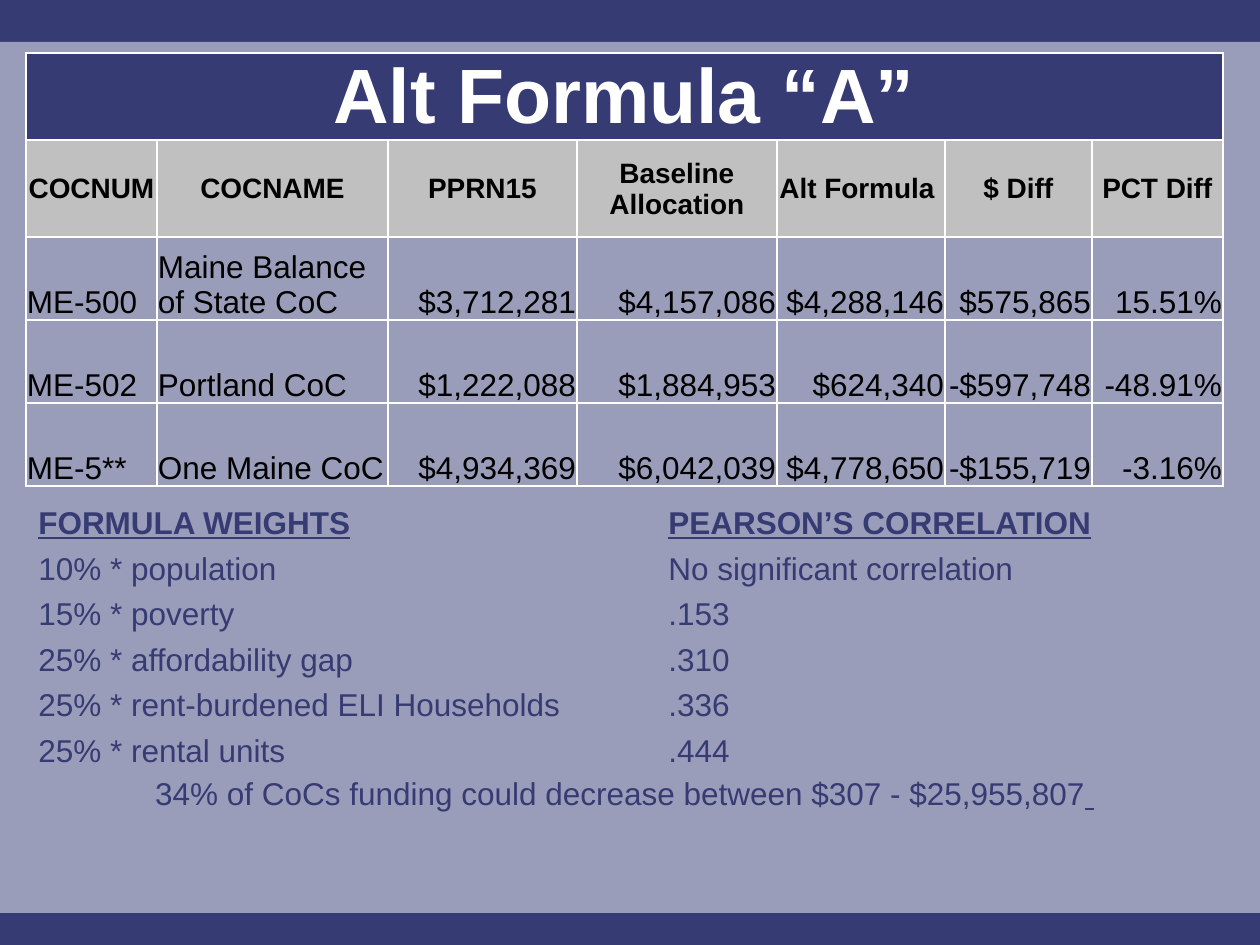
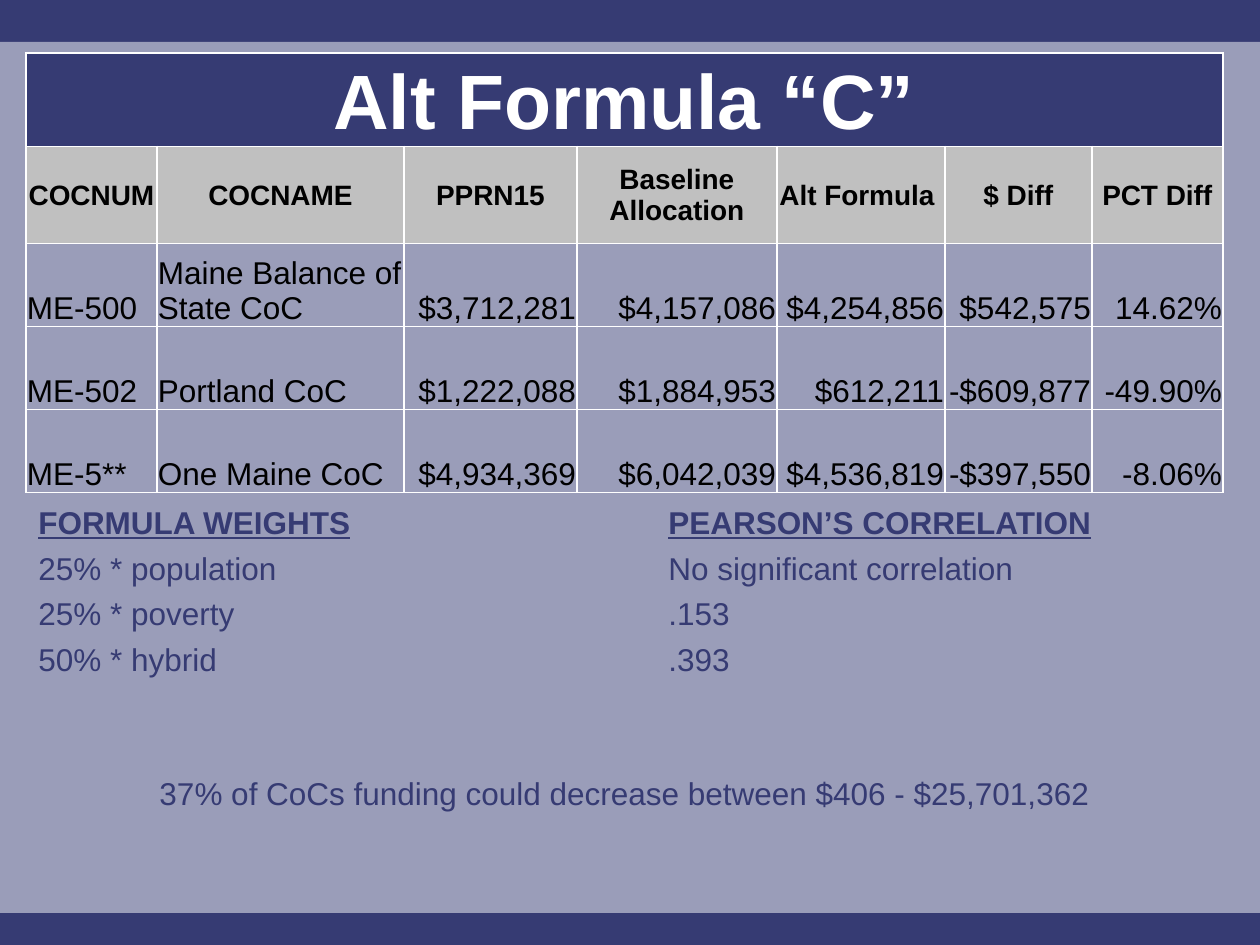
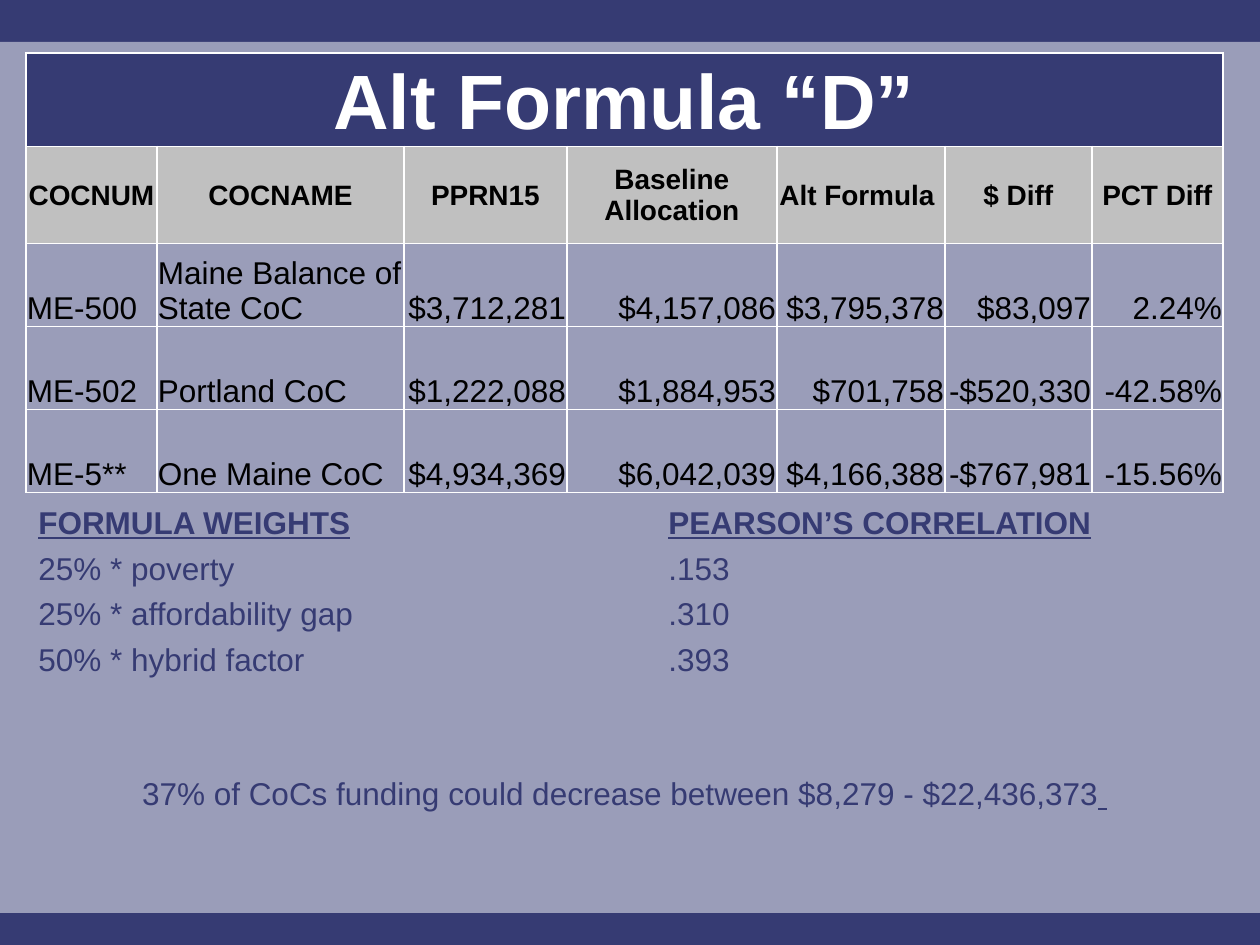
"""Build three slides that compare alternative funding formulas."""
from dataclasses import dataclass

from lxml.etree import SubElement
from pptx import Presentation
from pptx.dml.color import RGBColor
from pptx.enum.shapes import MSO_SHAPE
from pptx.enum.text import MSO_ANCHOR, PP_ALIGN
from pptx.oxml.ns import qn
from pptx.util import Pt

HEADERS = ["COCNUM", "COCNAME", "PPRN15", "Baseline Allocation", "Alt Formula ", "$ Diff", "PCT Diff"]
AREAS = [
    ("ME-500", "Maine Balance of State CoC", "$3,712,281", "$4,157,086"),
    ("ME-502", "Portland CoC", "$1,222,088", "$1,884,953"),
    ("ME-5**", "One Maine CoC", "$4,934,369", "$6,042,039"),
]
WEIGHT_HEADINGS = ("FORMULA WEIGHTS", "PEARSON’S CORRELATION")
FORMULAS = [
    {
        "title": "Alt Formula “A”",
        "middle_columns": [231, 189, 200],
        "results": [
            ("$4,288,146", "$575,865", "15.51%"),
            ("$624,340", "-$597,748", "-48.91%"),
            ("$4,778,650", "-$155,719", "-3.16%"),
        ],
        "weights": [
            ("10% * population", "No significant correlation"),
            ("15% * poverty", ".153"),
            ("25% * affordability gap", ".310"),
            ("25% * rent-burdened ELI Households", ".336"),
            ("25% * rental units", ".444"),
        ],
        "impact": "34% of CoCs funding could decrease between $307 - $25,955,807",
        "underlined_end": " ",
    },
    {
        "title": "Alt Formula “C”",
        "middle_columns": [247, 173, 200],
        "results": [
            ("$4,254,856", "$542,575", "14.62%"),
            ("$612,211", "-$609,877", "-49.90%"),
            ("$4,536,819", "-$397,550", "-8.06%"),
        ],
        "weights": [
            ("25% * population", "No significant correlation"),
            ("25% * poverty", ".153"),
            ("50% * hybrid", ".393"),
        ],
        "impact": "37% of CoCs funding could decrease between $406 - $25,701,362",
        "underlined_end": "",
    },
    {
        "title": "Alt Formula “D”",
        "middle_columns": [247, 163, 210],
        "results": [
            ("$3,795,378", "$83,097", "2.24%"),
            ("$701,758", "-$520,330", "-42.58%"),
            ("$4,166,388", "-$767,981", "-15.56%"),
        ],
        "weights": [
            ("25% * poverty", ".153"),
            ("25% * affordability gap", ".310"),
            ("50% * hybrid factor", ".393"),
        ],
        "impact": "37% of CoCs funding could decrease between $8,279 - $22,436,373",
        "underlined_end": " ",
    },
]

PX_PER_INCH = 126
SLIDE_SIZE = (1260, 945)
PANEL_BOX = (0, 42, 1260, 871)
CONTENT_LEFT, CONTENT_WIDTH = 26, 1197
TABLE_TOP = 53
ROW_HEIGHTS = [83, 97, 83, 83, 83]
FIRST_COLUMN = 131
LAST_COLUMNS = [168, 147, 131]
WEIGHTS_BOX = (CONTENT_LEFT, 497, CONTENT_WIDTH, 230)
IMPACT_BOX = (CONTENT_LEFT, 768, CONTENT_WIDTH, 114)
CORRELATION_TAB = 630


@dataclass(frozen=True)
class Theme:
    """Colours, font and type sizes."""
    navy: str = "363B73"
    white: str = "FFFFFF"
    black: str = "000000"
    grey: str = "C0C0C0"
    font: str = "Arial"
    title_size: int = 44
    header_size: int = 16
    body_size: int = 18
    paragraph_gap: float = 4.4
    border_width: int = 1


THEME = Theme()


def px(length):
    """Turn pixels into EMU."""
    return round(length * 914400 / PX_PER_INCH)


def colour(code):
    """Turn a hex code into a colour."""
    return RGBColor.from_string(code)


def add_run(paragraph, text, size, code, bold=False, underline=False):
    """Add one formatted run."""
    run = paragraph.add_run()
    run.text = text
    font = run.font
    font.name, font.size, font.bold, font.underline = THEME.font, Pt(size), bold, underline
    font.color.rgb = colour(code)


def add_panel(slide, master):
    """Lay the half-transparent panel on the master."""
    panel = slide.shapes.add_shape(MSO_SHAPE.RECTANGLE, *map(px, PANEL_BOX))
    panel.shadow.inherit = False
    panel.line.fill.background()
    panel.fill.solid()
    panel.fill.fore_color.rgb = colour(THEME.white)
    SubElement(next(panel.element.iter(qn("a:srgbClr"))), qn("a:alpha"), val="50000")
    next(panel.element.iter(qn("p:cNvPr"))).set("id", "20")
    master.shapes.element.insert(2, panel.element)


def style_cell(cell, fill, anchor):
    """Set the borders, fill, margins and anchor of a cell."""
    properties = cell._tc.get_or_add_tcPr()
    for side in ("lnL", "lnR", "lnT", "lnB"):
        border = SubElement(properties, qn(f"a:{side}"), w=str(Pt(THEME.border_width)))
        SubElement(SubElement(border, qn("a:solidFill")), qn("a:srgbClr"), val=THEME.white)
    if fill:
        cell.fill.solid()
        cell.fill.fore_color.rgb = colour(fill)
    else:
        cell.fill.background()
    cell.margin_left = cell.margin_right = cell.margin_top = px(1)
    cell.margin_bottom = 0
    cell.vertical_anchor = anchor


def write_cell(cell, text, size, code, alignment, bold=False):
    """Write one run into a cell."""
    paragraph = cell.text_frame.paragraphs[0]
    paragraph.alignment = alignment
    add_run(paragraph, text, size, code, bold)


def add_formula_table(slide, formula):
    """Add the table with its title row, headers and values."""
    columns = [FIRST_COLUMN, *formula["middle_columns"], *LAST_COLUMNS]
    box = (CONTENT_LEFT, TABLE_TOP, CONTENT_WIDTH, sum(ROW_HEIGHTS))
    table = slide.shapes.add_table(len(ROW_HEIGHTS), len(columns), *map(px, box)).table
    table.first_row = table.horz_banding = False
    for column, width in zip(table.columns, columns):
        column.width = px(width)
    row_fills = [THEME.navy, THEME.grey, None, None, None]
    for index, (row, height) in enumerate(zip(table.rows, ROW_HEIGHTS)):
        row.height = px(height)
        for cell in row.cells:
            style_cell(cell, row_fills[index], MSO_ANCHOR.MIDDLE if index == 1 else MSO_ANCHOR.BOTTOM)

    title = table.cell(0, 0)
    title.merge(table.cell(0, len(columns) - 1))
    write_cell(title, formula["title"], THEME.title_size, THEME.white, PP_ALIGN.CENTER, True)
    for column, header in enumerate(HEADERS):
        write_cell(table.cell(1, column), header, THEME.header_size, THEME.black, PP_ALIGN.CENTER, True)
    for row, (area, results) in enumerate(zip(AREAS, formula["results"]), 2):
        for column, value in enumerate(area + results):
            alignment = PP_ALIGN.LEFT if column < 2 else PP_ALIGN.RIGHT
            write_cell(table.cell(row, column), value, THEME.body_size, THEME.black, alignment)


def add_text_frame(slide, box):
    """Add a wrapping text box and return its frame."""
    frame = slide.shapes.add_textbox(*map(px, box)).text_frame
    frame.word_wrap = True
    return frame


def add_weights(slide, weights):
    """List each weight with its correlation at a tab stop."""
    frame = add_text_frame(slide, WEIGHTS_BOX)
    for index, (weight, correlation) in enumerate([WEIGHT_HEADINGS, *weights]):
        heading = index == 0
        paragraph = frame.paragraphs[0] if heading else frame.add_paragraph()
        tabs = SubElement(paragraph._p.get_or_add_pPr(), qn("a:tabLst"))
        SubElement(tabs, qn("a:tab"), pos=str(px(CORRELATION_TAB)), algn="l")
        if not heading:
            paragraph.space_before = Pt(THEME.paragraph_gap)
        for text, underline in ((weight, heading), ("\t", False), (correlation, heading)):
            add_run(paragraph, text, THEME.body_size, THEME.navy, heading, underline)


def add_impact(slide, formula):
    """Add the centred closing sentence."""
    paragraph = add_text_frame(slide, IMPACT_BOX).paragraphs[0]
    paragraph.alignment = PP_ALIGN.CENTER
    add_run(paragraph, formula["impact"], THEME.body_size, THEME.navy)
    if formula["underlined_end"]:
        add_run(paragraph, formula["underlined_end"], THEME.body_size, THEME.navy, True, True)


def main():
    """Build and save the presentation."""
    presentation = Presentation()
    presentation.slide_width, presentation.slide_height = map(px, SLIDE_SIZE)
    master = presentation.slide_master
    master.background.fill.solid()
    master.background.fill.fore_color.rgb = colour(THEME.navy)
    blank_layout = presentation.slide_layouts.get_by_name("Blank")
    for index, formula in enumerate(FORMULAS):
        slide = presentation.slides.add_slide(blank_layout)
        if index == 0:
            add_panel(slide, master)
        add_formula_table(slide, formula)
        add_weights(slide, formula["weights"])
        add_impact(slide, formula)
    presentation.save("out.pptx")


if __name__ == "__main__":
    main()
